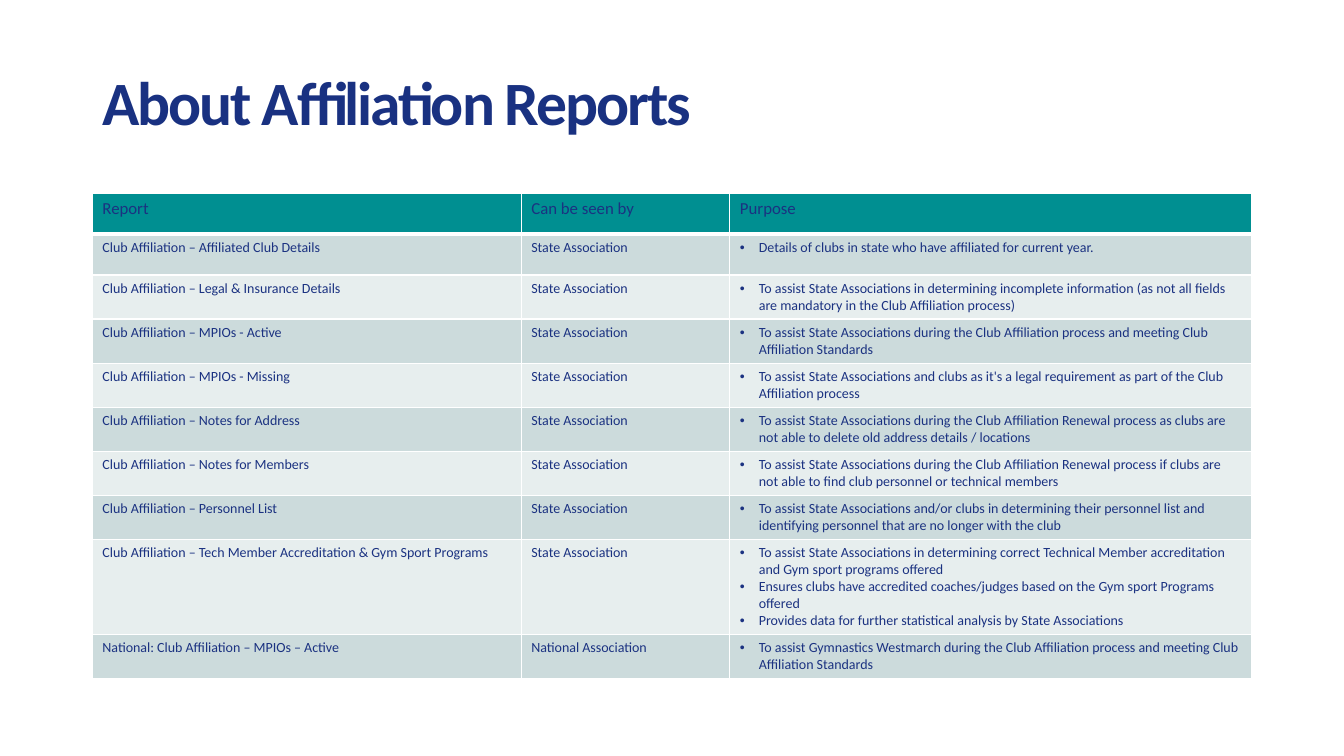
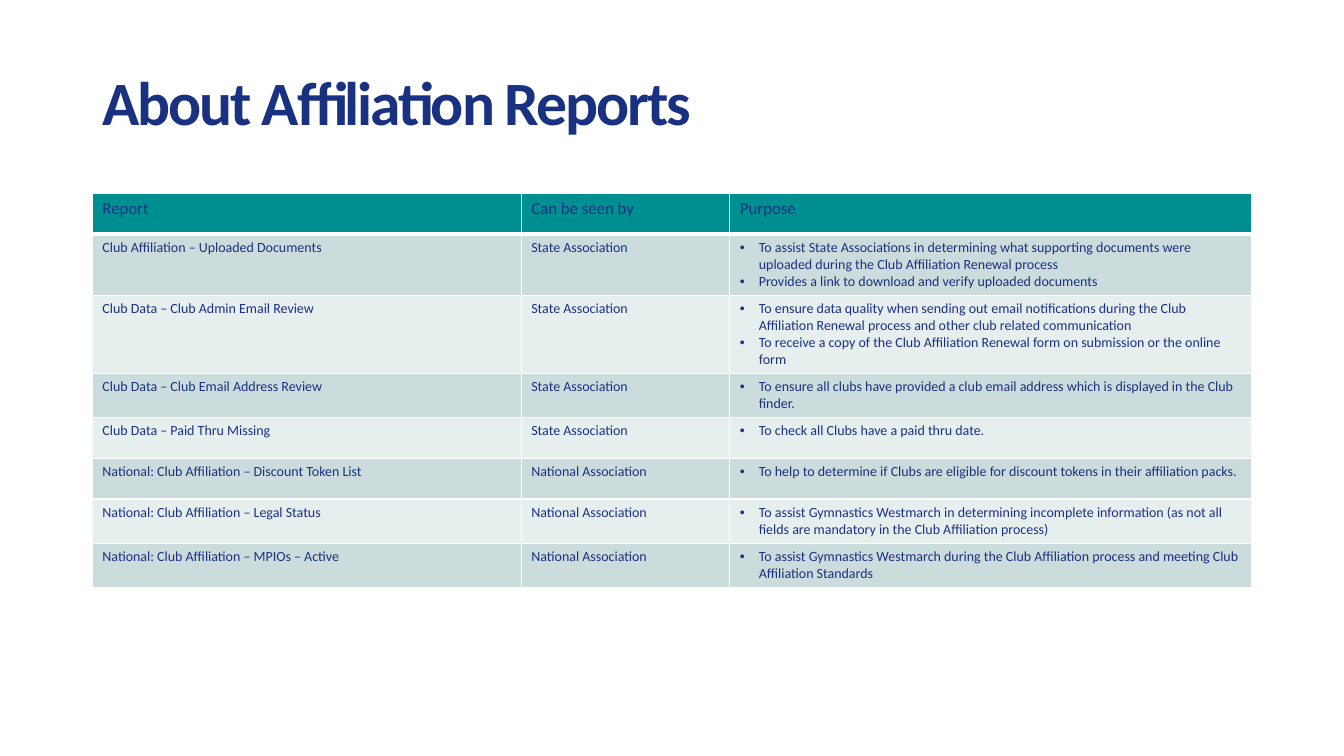
import pptx
import pptx.dml.color
import pptx.enum.text
import pptx.oxml.ns
import pptx.util
import lxml.etree

Pt = pptx.util.Pt

SLIDE_SIZE = (960, 540)
TITLE_BOX = (66, 35, 711, 86)
TABLE_BOX = (66, 138, 828)
COLUMN_SHARES = (0.37, 0.18, 0.45)
ROW_HEIGHT = 29.2
BULLET_INDENT = 13.5

TITLE_COLOR = "193181"
TEXT_COLOR = "1B3281"
HEADER_FILL = "008F91"
BAND_FILLS = ("CCDBDC", "E7EEEE")
LINE_COLOR = "FFFFFF"

TITLE_FONT = {"name": "Calibri", "size": Pt(44), "bold": True}
HEADER_FONT = {"name": "Calibri", "size": Pt(12), "bold": False}
BODY_FONT = {"name": "Calibri", "size": Pt(10), "bold": False}

TITLE = "About Affiliation Reports"
HEADINGS = ("Report", "Can be seen by", "Purpose")
STATE = "State Association"
NATIONAL = "National Association"

# The last row of both tables
NATIONAL_ACTIVE = (
    "National: Club Affiliation – MPIOs – Active", NATIONAL,
    ["To assist Gymnastics Westmarch during the Club Affiliation process and meeting Club Affiliation Standards"])

CLUB_REPORTS = [
    ("Club Affiliation – Affiliated Club Details", STATE,
     ["Details of clubs in state who have affiliated for current year."]),
    ("Club Affiliation – Legal & Insurance Details", STATE,
     ["To assist State Associations in determining incomplete information (as not all fields are mandatory in the Club Affiliation process)"]),
    ("Club Affiliation – MPIOs - Active", STATE,
     ["To assist State Associations during the Club Affiliation process and meeting Club Affiliation Standards"]),
    ("Club Affiliation – MPIOs - Missing", STATE,
     ["To assist State Associations and clubs as it's a legal requirement as part of the Club Affiliation process"]),
    ("Club Affiliation – Notes for Address", STATE,
     ["To assist State Associations during the Club Affiliation Renewal process as clubs are not able to delete old address details / locations"]),
    ("Club Affiliation – Notes for Members", STATE,
     ["To assist State Associations during the Club Affiliation Renewal process if clubs are not able to find club personnel or technical members"]),
    ("Club Affiliation – Personnel List", STATE,
     ["To assist State Associations and/or clubs in determining their personnel list and identifying personnel that are no longer with the club"]),
    ("Club Affiliation – Tech Member Accreditation & Gym Sport Programs", STATE,
     ["To assist State Associations in determining correct Technical Member accreditation and Gym sport programs offered",
      "Ensures clubs have accredited coaches/judges based on the Gym sport Programs offered",
      "Provides data for further statistical analysis by State Associations"]),
    NATIONAL_ACTIVE,
]

DATA_REPORTS = [
    ("Club Affiliation – Uploaded Documents", STATE,
     ["To assist State Associations in determining what supporting documents were uploaded during the Club Affiliation Renewal process",
      "Provides a link to download and verify uploaded documents"]),
    ("Club Data – Club Admin Email Review", STATE,
     ["To ensure data quality when sending out email notifications during the Club Affiliation Renewal process and other club related communication",
      "To receive a copy of the Club Affiliation Renewal form on submission or the online form"]),
    ("Club Data – Club Email Address Review", STATE,
     ["To ensure all clubs have provided a club email address which is displayed in the Club finder."]),
    ("Club Data – Paid Thru Missing", STATE,
     ["To check all Clubs have a paid thru date."]),
    ("National: Club Affiliation – Discount Token List", NATIONAL,
     ["To help to determine if Clubs are eligible for discount tokens in their affiliation packs."]),
    ("National: Club Affiliation – Legal Status", NATIONAL,
     ["To assist Gymnastics Westmarch in determining incomplete information (as not all fields are mandatory in the Club Affiliation process)"]),
    NATIONAL_ACTIVE,
]


def rgb(value):
    return pptx.dml.color.RGBColor.from_string(value)


def add_element(parent, tag, **attributes):
    return lxml.etree.SubElement(parent, pptx.oxml.ns.qn(tag), **attributes)


def format_font(font, settings, color):
    for key, value in settings.items():
        setattr(font, key, value)
    font.color.rgb = rgb(color)


def add_bullet(paragraph):
    properties = paragraph._p.get_or_add_pPr()
    indent = Pt(BULLET_INDENT)
    properties.set("marL", str(indent))
    properties.set("indent", str(-indent))
    add_element(properties, "a:buFont", typeface="Arial")
    add_element(properties, "a:buChar", char="•")


def add_borders(cell, bottom_width):
    properties = cell._tc.get_or_add_tcPr()
    for side, width in (("L", 1), ("R", 1), ("T", 1), ("B", bottom_width)):
        line = add_element(properties, "a:ln" + side, w=str(Pt(width)))
        fill = add_element(line, "a:solidFill")
        add_element(fill, "a:srgbClr", val=LINE_COLOR)


def fill_cell(cell, lines, font, fill, bulleted=False, bottom_width=1):
    add_borders(cell, bottom_width)
    cell.fill.solid()
    cell.fill.fore_color.rgb = rgb(fill)
    cell.text = "\n".join(lines)
    for paragraph in cell.text_frame.paragraphs:
        if bulleted:
            add_bullet(paragraph)
        format_font(paragraph.runs[0].font, font, TEXT_COLOR)


def place_title(slide, box):
    title = slide.shapes.title
    title.left, title.top, title.width, title.height = map(Pt, box)
    frame = title.text_frame
    frame.text = TITLE
    frame.word_wrap = True
    frame.auto_size = pptx.enum.text.MSO_AUTO_SIZE.NONE
    frame.vertical_anchor = pptx.enum.text.MSO_ANCHOR.MIDDLE
    heading = frame.paragraphs[0]
    heading.alignment = pptx.enum.text.PP_ALIGN.LEFT
    heading.line_spacing = 0.75
    run = heading.runs[0]
    format_font(run.font, TITLE_FONT, TITLE_COLOR)
    run._r.get_or_add_rPr().set("spc", "-150")


def place_reports(slide, box, reports):
    left, top, width = box
    row_count = len(reports) + 1
    table = slide.shapes.add_table(
        row_count, len(HEADINGS), Pt(left), Pt(top), Pt(width), Pt(ROW_HEIGHT * row_count)).table
    table.first_row = table.horz_banding = False
    for column, share in zip(table.columns, COLUMN_SHARES):
        column.width = Pt(width * share)
    for row in table.rows:
        row.height = Pt(ROW_HEIGHT)

    # Header row
    for column, heading in enumerate(HEADINGS):
        fill_cell(table.cell(0, column), [heading], HEADER_FONT, HEADER_FILL, bottom_width=3)

    # Banded report rows
    for row, (report, audience, purposes) in enumerate(reports, 1):
        fill = BAND_FILLS[(row - 1) % 2]
        fill_cell(table.cell(row, 0), [report], BODY_FONT, fill)
        fill_cell(table.cell(row, 1), [audience], BODY_FONT, fill)
        fill_cell(table.cell(row, 2), purposes, BODY_FONT, fill, bulleted=True)


def add_report_slide(deck, reports):
    slide = deck.slides.add_slide(deck.slide_layouts[5])
    place_title(slide, TITLE_BOX)
    place_reports(slide, TABLE_BOX, reports)


def main():
    deck = pptx.Presentation()
    deck.slide_width, deck.slide_height = map(Pt, SLIDE_SIZE)
    for reports in (CLUB_REPORTS, DATA_REPORTS):
        add_report_slide(deck, reports)
    deck.save("out.pptx")


if __name__ == "__main__":
    main()
